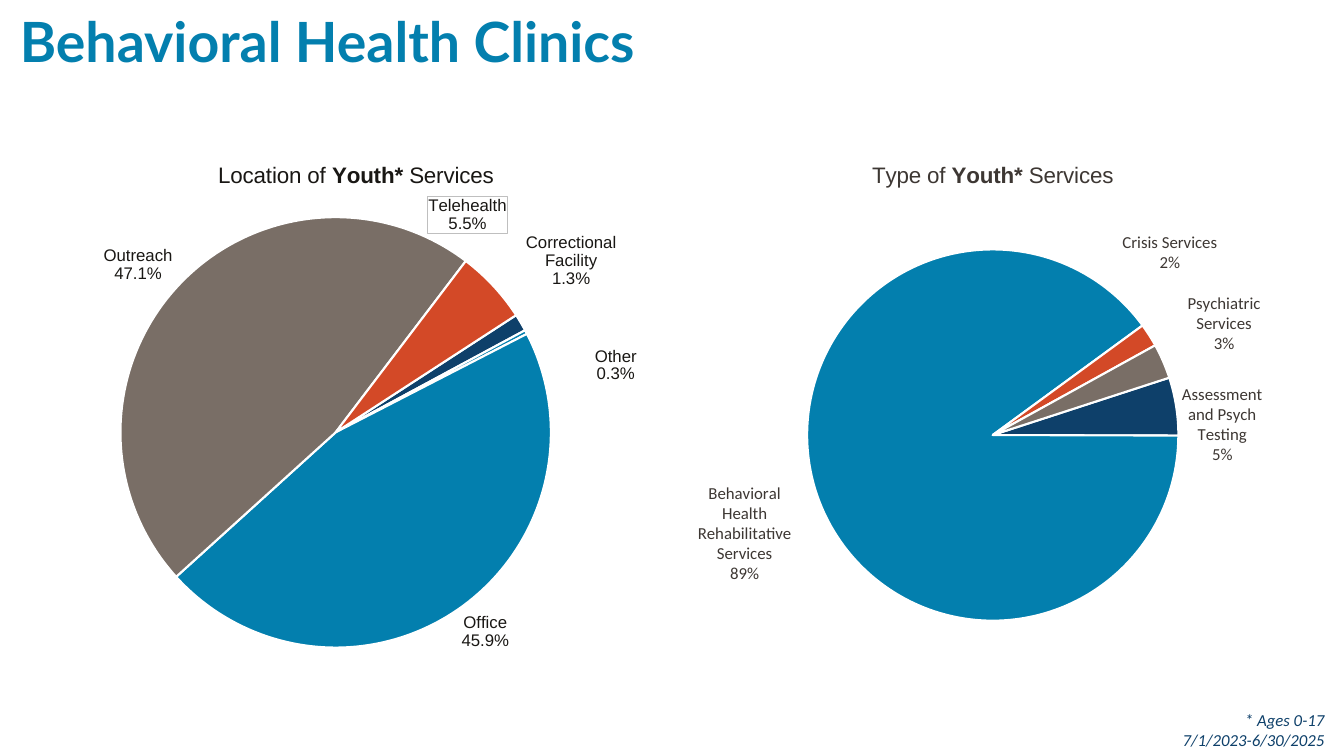
import copy

import pptx
import pptx.chart.data
import pptx.dml.color
import pptx.enum.chart
import pptx.enum.text
import pptx.oxml
import pptx.util
from pptx.oxml.ns import nsdecls, qn

Cm, Pt = pptx.util.Cm, pptx.util.Pt
BLUE, NAVY, RED, TAUPE = "037FAE", "0E406A", "D34927", "796E66"
BLACK, DARK = "191714", "3D3733"


def rgb(value):
    return pptx.dml.color.RGBColor.from_string(value)


def style_font(font, size, color, name, bold=False, italic=False):
    font.size, font.name = Pt(size), name
    font.bold, font.italic = bold, italic
    font.color.rgb = rgb(color)


def add_run(p, text, **fmt):
    r = p.add_run()
    r.text = text
    style_font(r.font, **fmt)


def manual_layout(x, y, w=None, h=None, edge=False):
    """Return a c:layout: a plot box with a size, else a place or an offset."""
    parts = '<c:layoutTarget val="inner"/>' if w else ""
    if w or edge:
        parts += '<c:xMode val="edge"/><c:yMode val="edge"/>'
    parts += f'<c:x val="{x}"/><c:y val="{y}"/>'
    if w:
        parts += f'<c:w val="{w}"/><c:h val="{h}"/>'
    return pptx.oxml.parse_xml(
        f'<c:layout {nsdecls("c")}><c:manualLayout>{parts}</c:manualLayout></c:layout>')


def label_size(w, h):
    """Return the extension that sets how wide a label may grow before it wraps."""
    return pptx.oxml.parse_xml(
        f'<c:extLst {nsdecls("c")}><c:ext uri="{{CE6537A1-D6FC-4f65-9D91-7224C49458BB}}" '
        'xmlns:c15="http://schemas.microsoft.com/office/drawing/2012/chart"><c15:layout>'
        f'<c:manualLayout><c:w val="{w}"/><c:h val="{h}"/></c:manualLayout>'
        '</c15:layout></c:ext></c:extLst>')


class Deck:
    def __init__(self):
        self.prs = pptx.Presentation()
        self.prs.slide_width, self.prs.slide_height = Cm(33.87), Cm(19.05)
        self.slide = self.prs.slides.add_slide(self.prs.slide_layouts[6])

    def text(self, lines, x, y, w, h, align, anchor, **fmt):
        tf = self.slide.shapes.add_textbox(Cm(x), Cm(y), Cm(w), Cm(h)).text_frame
        tf.word_wrap = True
        tf.vertical_anchor = anchor
        p = tf.paragraphs[0]
        p.alignment = align
        for i, line in enumerate(lines):
            if i:
                p.add_line_break()
            add_run(p, line, **fmt)

    def pie(self, x, subject, title_x, slices, start, plot_box, color,
            label_font, number_format, percent):
        """slices holds (category, value, fill, label offset, label size, boxed)."""
        data = pptx.chart.data.CategoryChartData()
        data.categories = [s[0] for s in slices]
        data.add_series("Series 1", [s[1] for s in slices])
        chart = self.slide.shapes.add_chart(
            pptx.enum.chart.XL_CHART_TYPE.PIE,
            Cm(x), Cm(3.71), Cm(16), Cm(13.56), data).chart
        chart.has_legend = False
        style_font(chart.font, 10, color, "Calibri")
        self.chart_title(chart, subject, title_x, color)

        plot = chart.plots[0]
        plot.vary_by_categories = True
        pie = plot._element
        plot_area = pie.getparent()
        for old in plot_area.findall(qn("c:layout")):
            plot_area.remove(old)
        plot_area.insert(0, manual_layout(*plot_box))
        for old in pie.findall(qn("c:firstSliceAng")):
            pie.remove(old)
        pie.append(pptx.oxml.parse_xml(
            f'<c:firstSliceAng {nsdecls("c")} val="{start}"/>'))

        series = plot.series[0]
        for i, s in enumerate(slices):
            fmt = series.points[i].format
            fmt.fill.solid()
            fmt.fill.fore_color.rgb = rgb(s[2])
            fmt.line.color.rgb = rgb("FFFFFF")
            fmt.line.width = Pt(1.5)
        self.slice_labels(series, slices, color, label_font, number_format, percent)

    def chart_title(self, chart, subject, title_x, color):
        chart.has_title = True
        title = chart.chart_title
        title.include_in_layout = False
        p = title.text_frame.paragraphs[0]
        for text, bold in ((subject + " of ", False), ("Youth*", True), (" Services", False)):
            add_run(p, text, size=16, color=color, name="Arial", bold=bold)
        el = title._element
        for old in el.findall(qn("c:layout")):
            el.remove(old)
        el.find(qn("c:tx")).addnext(manual_layout(title_x, 0.02, edge=True))

    def slice_labels(self, series, slices, color, font, number_format, percent):
        labels = series.data_labels
        style_font(labels.font, 12, color, font)
        labels.number_format = number_format
        labels.number_format_is_linked = False
        labels.position = pptx.enum.chart.XL_LABEL_POSITION.OUTSIDE_END
        labels.show_category_name = True
        labels.show_percentage = percent
        labels.show_value = not percent
        el = labels._element
        leader = el.find(qn("c:showLeaderLines"))
        if leader is not None:
            el.remove(leader)
        el.append(pptx.oxml.parse_xml(f'<c:separator {nsdecls("c")}>\n</c:separator>'))
        shared = list(el)
        moved = []
        for i, (_, _, _, offset, size, boxed) in enumerate(slices):
            if not offset:
                continue
            label = pptx.oxml.parse_xml(
                f'<c:dLbl {nsdecls("c")}><c:idx val="{i}"/></c:dLbl>')
            label.append(manual_layout(*offset))
            for child in shared:
                label.append(copy.deepcopy(child))
            if boxed:
                label.find(qn("c:numFmt")).addnext(pptx.oxml.parse_xml(
                    f'<c:spPr {nsdecls("c", "a")}><a:noFill/><a:ln w="9525"><a:solidFill>'
                    '<a:srgbClr val="BFBFBF"/></a:solidFill></a:ln></c:spPr>'))
            if size:
                label.append(label_size(*size))
            moved.append(label)
        for i, label in enumerate(moved):
            el.insert(i, label)
        el.append(pptx.oxml.parse_xml(f'<c:showLeaderLines {nsdecls("c")} val="0"/>'))


def main():
    deck = Deck()
    align, anchor = pptx.enum.text.PP_ALIGN, pptx.enum.text.MSO_ANCHOR
    deck.text(["Behavioral Health Clinics"], 0.25, 0.26, 33.35, 1.52, align.LEFT,
              anchor.MIDDLE, size=39.6, color=BLUE, name="Lato", bold=True)
    deck.text(["* Ages 0-17", "7/1/2023-6/30/2025"], 26.19, 17.75, 7.44, 1.27, align.RIGHT,
              anchor.TOP, size=12, color=NAVY, name="Calibri", italic=True)
    deck.pie(16.94, "Type", 0.31, [
        ("Assessment and Psych Testing", 5, NAVY, (0, 0.11), (0.2, 0.15), False),
        ("Behavioral Health Rehabilitative Services", 89, BLUE, (-0.03, -0.02),
         (0.22, 0.17), False),
        ("Crisis Services", 2, RED, (-0.05, -0.11), None, False),
        ("Psychiatric Services", 3, TAUPE, (0.03, -0.01), None, False),
    ], 72, (0.21, 0.19, 0.59, 0.69), DARK, "Calibri", '0"%"', False)
    deck.pie(0.94, "Location", 0.28, [
        ("Correctional Facility", 1.3, NAVY, (0, -0.06), None, False),
        ("Other", 0.3, BLUE, (0.1, 0.1), None, False),
        ("Office", 45.9, BLUE, None, None, False),
        ("Outreach", 47.1, TAUPE, None, None, False),
        ("Telehealth", 5.5, RED, (-0.11, -0.09), None, True),
    ], 57, (0.13, 0.13, 0.68, 0.8), BLACK, "Arial", "0.0%", True)
    deck.prs.save("out.pptx")


if __name__ == "__main__":
    main()
